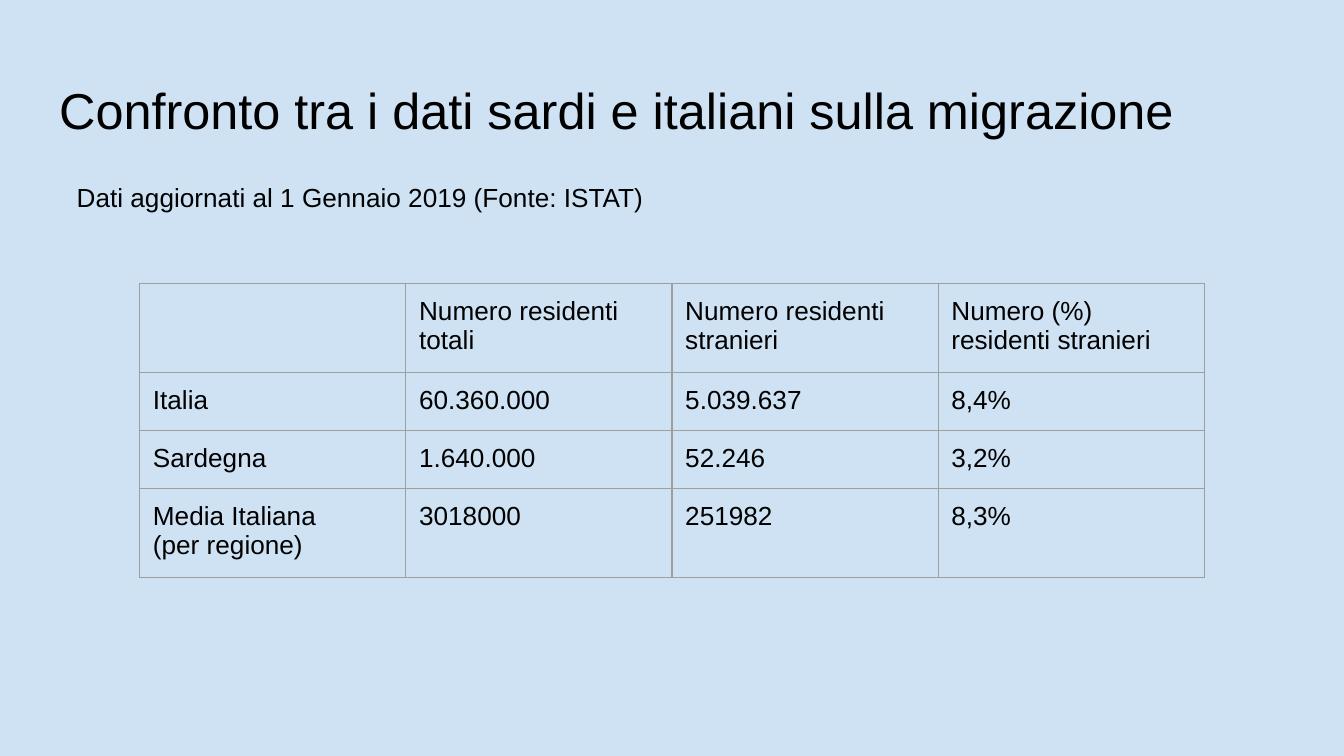
from lxml import etree
from pptx import Presentation
from pptx.dml.color import RGBColor
from pptx.enum.text import MSO_ANCHOR
from pptx.oxml.ns import qn
from pptx.util import Cm, Pt

TOP = MSO_ANCHOR.TOP

FONT = "Arial"
BACKGROUND = "CFE2F3"
INK = "000000"
BORDER = "9E9E9E"
INSET = Cm(0.25)

TEXTS = [
    ("Confronto tra i dati sardi e italiani sulla migrazione", 27, (0.87, 1.25, 23.67, 1.6)),
    ("Dati aggiornati al 1 Gennaio 2019 (Fonte: ISTAT)", 14, (1.2, 3.18, 15.9, 1.07)),
]
ROWS = [
    ("", "Numero residenti totali", "Numero residenti stranieri", "Numero (%) residenti stranieri"),
    ("Italia", "60.360.000", "5.039.637", "8,4%"),
    ("Sardegna", "1.640.000", "52.246", "3,2%"),
    ("Media Italiana\n(per regione)", "3018000", "251982", "8,3%"),
]
TABLE_LEFT, TABLE_TOP = 2.64, 5.36
COLUMN_WIDTH, ROW_HEIGHT = 5.03, 1.07
TABLE_SIZE = 14


def color(value):
    return RGBColor.from_string(value)


def set_insets(target):
    target.margin_left = target.margin_right = INSET
    target.margin_top = target.margin_bottom = INSET
    target.vertical_anchor = TOP


def write(frame, text, size):
    frame.text = text
    frame.word_wrap = True
    for paragraph in frame.paragraphs:
        paragraph.font.size = Pt(size)
        for span in paragraph.runs:
            span.font.name = FONT
            span.font.size = Pt(size)
            span.font.color.rgb = color(INK)


def add_borders(cell):
    properties = cell._tc.get_or_add_tcPr()
    for index, side in enumerate(("a:lnL", "a:lnR", "a:lnT", "a:lnB")):
        line = etree.Element(qn(side), w=str(Pt(0.75)))
        fill = etree.SubElement(line, qn("a:solidFill"))
        etree.SubElement(fill, qn("a:srgbClr"), val=BORDER)
        properties.insert(index, line)


def add_text(page, text, size, place):
    box = page.shapes.add_textbox(*map(Cm, place))
    set_insets(box.text_frame)
    write(box.text_frame, text, size)


def add_data_table(page):
    columns = len(ROWS[0])
    frame = page.shapes.add_table(
        len(ROWS), columns, Cm(TABLE_LEFT), Cm(TABLE_TOP),
        Cm(COLUMN_WIDTH * columns), Cm(ROW_HEIGHT * len(ROWS)),
    )
    table = frame.table
    table.first_row = False
    table.horz_banding = False
    for row_index, row in enumerate(ROWS):
        for column_index, text in enumerate(row):
            cell = table.cell(row_index, column_index)
            set_insets(cell)
            write(cell.text_frame, text, TABLE_SIZE)
            cell.fill.background()
            add_borders(cell)


def main():
    deck = Presentation()
    deck.slide_width = Cm(25.4)
    deck.slide_height = Cm(14.29)
    page = deck.slides.add_slide(deck.slide_layouts[6])
    page.background.fill.solid()
    page.background.fill.fore_color.rgb = color(BACKGROUND)
    for text, size, place in TEXTS:
        add_text(page, text, size, place)
    add_data_table(page)
    deck.save("out.pptx")


if __name__ == "__main__":
    main()
